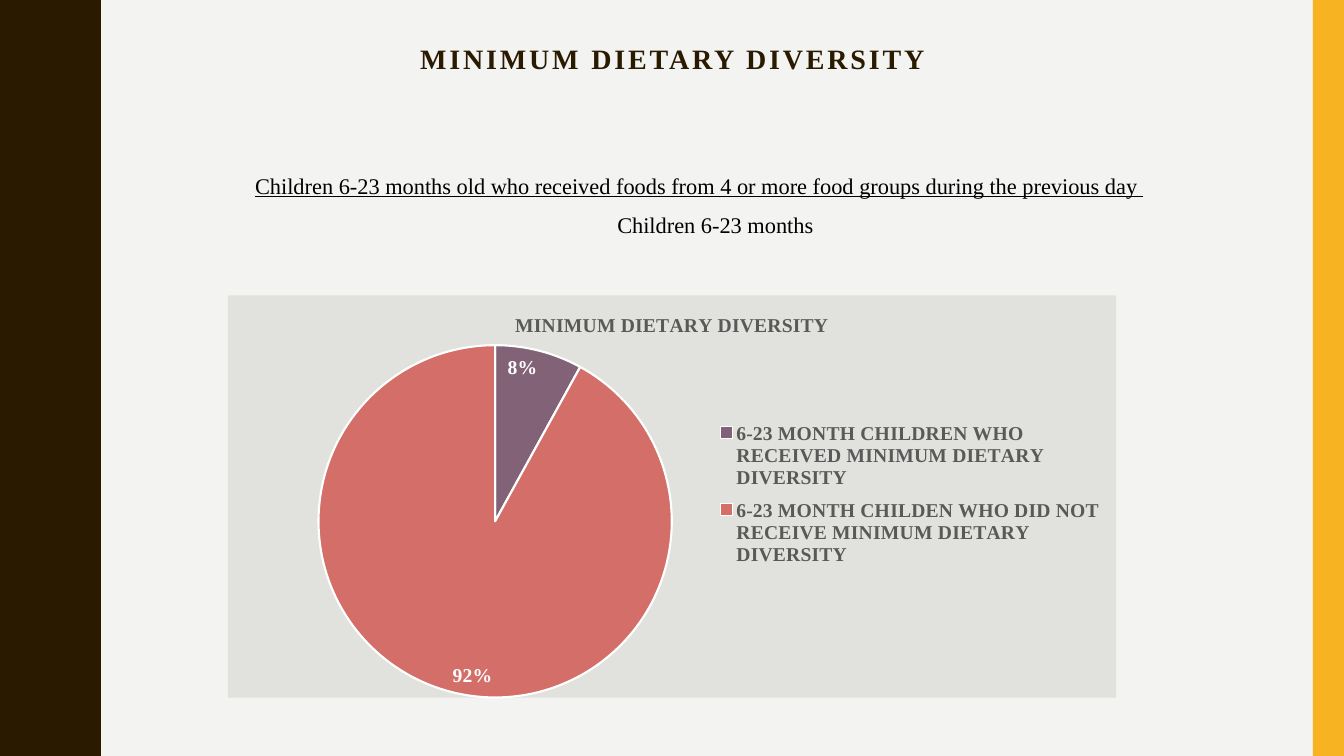
from lxml import etree
from pptx import Presentation
from pptx import util as u
from pptx.chart.data import CategoryChartData
from pptx.dml.color import RGBColor
from pptx.enum import chart as ch, shapes, text
from pptx.oxml import ns

SERIF = "Times New Roman"
BROWN, GOLD, GREY, WHITE = "2A1A00", "F8B323", "595959", "FFFFFF"
WIDE, HIGH = 13.33, 7.5
HEAD = "MINIMUM DIETARY DIVERSITY"
PARTS = [
    ("6-23 MONTH CHILDREN WHO RECEIVED MINIMUM DIETARY DIVERSITY", 8, "826276"),
    ("6-23 MONTH CHILDEN WHO DID NOT RECEIVE MINIMUM DIETARY DIVERSITY", 92, "D36F68"),
]


def color(code):
    return RGBColor.from_string(code)


def inches(box):
    return [u.Inches(n) for n in box]


def style(font, size, code, bold=False, line=False, name=SERIF):
    font.name, font.size = name, u.Pt(size)
    font.bold, font.underline = bold, line
    font.color.rgb = color(code)


def paint(shape, code):
    shape.fill.solid()
    shape.fill.fore_color.rgb = color(code)
    shape.line.fill.background()
    shape.shadow.inherit = False


def write(para, words, gap=0, **form):
    """Add a run to a centred paragraph; gap is letter spacing in points."""
    para.alignment = text.PP_ALIGN.CENTER
    run = para.add_run()
    run.text = words
    style(run.font, **form)
    if gap:
        run.font._element.set("spc", str(int(gap * 100)))


def frame(slide, box):
    area = slide.shapes.add_textbox(*inches(box)).text_frame
    area.word_wrap = True
    return area


def wave(slide, box):
    """Fill the left band, its right edge swinging in equal half waves."""
    left, top, wide, high = box
    swing, half = 0.19, high / 10
    rise = [0, 0, 0.01, 0.02, 0.03, 0.05, 0.07, 0.09, 0.11, 0.13, 0.15, 0.17, 0.18, 0.19]
    steps = [0, 0.07, 0.14, 0.2, 0.25, 0.29, 0.33, 0.38, 0.42, 0.46, 0.5, 0.55, 0.61, 0.68]
    edge = []
    for turn in range(10):
        for out, down in zip(rise, steps):
            push = swing - out if turn % 2 else out
            edge.append((left + wide - swing + push, top + turn * half + down))
    edge += [(left + wide - swing, top + high), (left, top + high)]
    form = slide.shapes.build_freeform(left, top, scale=u.Inches(1))
    form.add_line_segments(edge, close=True)
    paint(form.convert_to_shape(), BROWN)


def stripe(slide, box):
    paint(slide.shapes.add_shape(shapes.MSO_SHAPE.RECTANGLE, *inches(box)), GOLD)


def title(slide, box):
    para = frame(slide, box).paragraphs[0]
    para.line_spacing = 0.9
    write(para, HEAD, gap=2, size=20, code=BROWN, bold=True)


def ratio(slide, box):
    """Write the indicator as an underlined numerator over a denominator."""
    area = frame(slide, box)
    over, under = area.paragraphs[0], area.add_paragraph()
    for para in (over, under):
        para.line_spacing, para.space_before = 1.1, u.Pt(7)
    form = dict(size=16, code="000000")
    write(over, "Children 6-23 months old who received foods from 4 or more "
          "food groups during the previous day", line=True, **form)
    write(over, " ", gap=16, line=True, **form)
    write(under, "Children 6-23 months", **form)
    under._p.get_or_add_pPr().set("marL", str(u.Inches(0.32)))


def place(node, inner=False, **share):
    """Set a manual layout, in shares of the chart, on a plot area or legend."""
    for old in node.findall(ns.qn("c:layout")):
        node.remove(old)
    layout = etree.Element(ns.qn("c:layout"))
    manual = etree.SubElement(layout, ns.qn("c:manualLayout"))
    pairs = [("layoutTarget", "inner")] if inner else []
    pairs += [("xMode", "edge"), ("yMode", "edge"), *share.items()]
    for tag, val in pairs:
        etree.SubElement(manual, ns.qn("c:" + tag)).set("val", str(val))
    if inner:
        node.insert(0, layout)
    else:
        node.find(ns.qn("c:legendPos")).addnext(layout)


def pie(slide, box):
    data = CategoryChartData(number_format="General")
    data.categories = [name for name, _, _ in PARTS]
    data.add_series(HEAD, [val for _, val, _ in PARTS])
    chart = slide.shapes.add_chart(ch.XL_CHART_TYPE.PIE, *inches(box), data).chart
    style(chart.font, 10, "000000", name="Cabin")

    chart.has_title = True
    para = chart.chart_title.text_frame.paragraphs[0]
    write(para, HEAD, size=14, code=GREY, bold=True)
    chart.chart_title.include_in_layout = False

    chart.has_legend = True
    chart.legend.position = ch.XL_LEGEND_POSITION.RIGHT
    chart.legend.include_in_layout = False
    style(chart.legend.font, 14, GREY, bold=True)
    place(chart.legend._element, x=0.546, y=0.29, w=0.444, h=0.41)

    plot = chart.plots[0]
    plot.vary_by_categories = True
    for spot, (_, _, code) in enumerate(PARTS):
        look = plot.series[0].points[spot].format
        look.fill.solid()
        look.fill.fore_color.rgb = color(code)
        look.line.color.rgb = color(WHITE)
        look.line.width = u.Pt(1.5)
    plot.has_data_labels = True
    labels = plot.data_labels
    labels.show_percentage, labels.show_value = True, False
    labels.number_format, labels.number_format_is_linked = "0%", False
    labels.position = ch.XL_LABEL_POSITION.INSIDE_END
    style(labels.font, 14, WHITE, bold=True)

    space = chart._chartSpace
    place(space.chart.plotArea, inner=True, x=0.089, y=0.124, w=0.424, h=0.876)
    back = etree.Element(ns.qn("c:spPr"))
    fill = etree.SubElement(back, ns.qn("a:solidFill"))
    etree.SubElement(fill, ns.qn("a:srgbClr")).set("val", "E1E2DD")
    line = etree.SubElement(back, ns.qn("a:ln"))
    etree.SubElement(line, ns.qn("a:noFill"))
    space.chart.addnext(back)


def main():
    deck = Presentation()
    deck.slide_width, deck.slide_height = u.Inches(WIDE), u.Inches(HIGH)
    slide = deck.slides.add_slide(deck.slide_layouts[6])
    slide.background.fill.solid()
    slide.background.fill.fore_color.rgb = color("F3F3F2")
    wave(slide, (0, 0, 0.97, HIGH))
    stripe(slide, (WIDE - 0.31, 0, 0.31, HIGH))
    title(slide, (0.92, 0.4, 11.5, 1.1))
    ratio(slide, (1.37, 1.63, 11.13, 4.8))
    pie(slide, (2.26, 2.93, 8.81, 4))
    deck.save("out.pptx")


if __name__ == "__main__":
    main()
